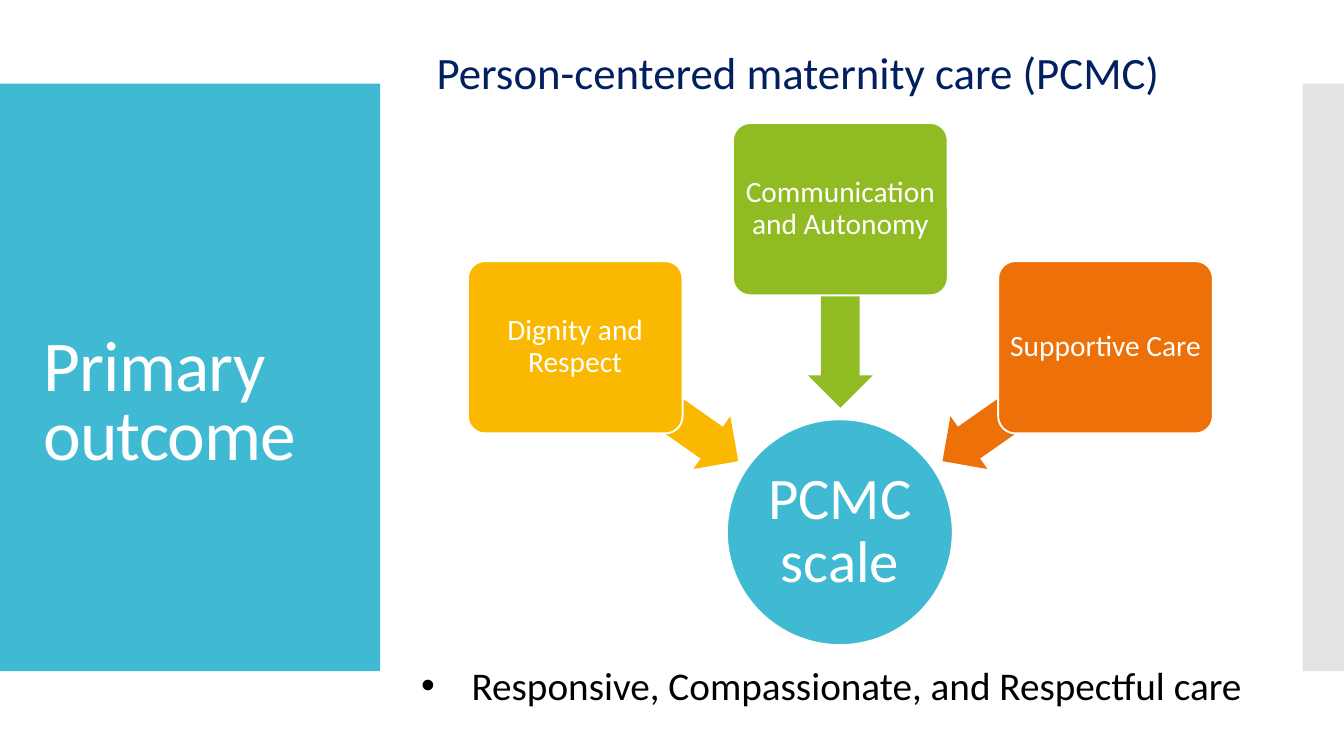
from lxml import etree
from pptx import Presentation
from pptx.dml.color import RGBColor
from pptx.enum import shapes, text
from pptx.oxml import ns
from pptx.util import Inches, Pt

WHITE, TEAL = "FFFFFF", "40BAD2"
CENTER_X = 8.33
DOMAINS = [
    ("Dignity and Respect", "FAB900", -1, 215),
    ("Communication and Autonomy", "90BB23", 0, 270),
    ("Supportive Care", "EE7008", 1, 325),
]


def rgb(value):
    """Turn a hex string into a colour."""
    return RGBColor.from_string(value)


def place(item, left, top, width, height):
    """Move and size an element, given in inches."""
    item.left, item.top = Inches(left), Inches(top)
    item.width, item.height = Inches(width), Inches(height)


def add_block(slide, kind, box, fill, outlined=False):
    """Add a flat preset shape, with a white outline on request."""
    block = slide.shapes.add_shape(kind, *map(Inches, box))
    block.shadow.inherit = False
    block.fill.solid()
    block.fill.fore_color.rgb = rgb(fill)
    if outlined:
        block.line.color.rgb = rgb(WHITE)
        block.line.width = Pt(1.35)
    else:
        block.line.fill.background()
    return block


def write(holder, wording, size, color, anchor, align=text.PP_ALIGN.LEFT,
          spacing=0.9, before=0, bullet=None, indent=0, inset=None):
    """Fill a holder with one formatted paragraph."""
    frame = holder.text_frame
    frame.word_wrap = True
    frame.auto_size = text.MSO_AUTO_SIZE.NONE
    frame.vertical_anchor = anchor
    if inset is not None:
        frame.margin_left = frame.margin_right = Inches(inset)
        frame.margin_top = frame.margin_bottom = Inches(inset)
    frame.text = wording
    paragraph = frame.paragraphs[0]
    properties = paragraph._p.get_or_add_pPr()
    properties.set("marL", str(Inches(indent)))
    properties.set("indent", str(-Inches(indent)))
    if bullet:
        etree.SubElement(properties, ns.qn("a:buFont"), typeface="Arial")
        etree.SubElement(properties, ns.qn("a:buChar"), char=bullet)
    else:
        etree.SubElement(properties, ns.qn("a:buNone"))
    paragraph.alignment = align
    paragraph.line_spacing = spacing
    paragraph.space_before = Pt(before)
    paragraph.font.name = "Calibri"
    paragraph.font.size = Pt(size)
    paragraph.font.color.rgb = rgb(color)
    return paragraph


def add_panels(slide):
    """Put the side panels behind the title."""
    title_panel = add_block(slide, shapes.MSO_SHAPE.RECTANGLE, (0, 0.83, 3.77, 5.83), TEAL)
    edge_panel = add_block(slide, shapes.MSO_SHAPE.RECTANGLE, (12.92, 0.83, 0.42, 5.83), "C8C8C8")
    edge_color = edge_panel.element.spPr.find(".//" + ns.qn("a:srgbClr"))
    etree.SubElement(edge_color, ns.qn("a:alpha"), val="50000")
    for panel in (title_panel, edge_panel):
        slide.shapes.title.element.addprevious(panel.element)


def add_headings(slide):
    """Fill the title and the body placeholder."""
    title, subject = slide.shapes.title, slide.placeholders[1]
    place(title, 0.33, 1.08, 3.09, 3.67)
    heading = write(title, "Primary outcome", 51, WHITE, text.MSO_ANCHOR.BOTTOM, spacing=0.8)
    heading.runs[0]._r.get_or_add_rPr().set("spc", "-60")
    place(subject, 4.23, 0.42, 8.52, 0.64)
    write(subject, "Person-centered maternity care (PCMC)", 32, "002060",
          text.MSO_ANCHOR.MIDDLE, before=12)


def add_scale(slide):
    """Draw the circle that the domains lead to."""
    scale = add_block(slide, shapes.MSO_SHAPE.OVAL,
                      (CENTER_X - 1.12, 4.16, 2.24, 2.24), TEAL, True)
    write(scale, "PCMC scale", 42, WHITE, text.MSO_ANCHOR.MIDDLE,
          text.PP_ALIGN.CENTER, inset=0.03)


def add_domain(slide, wording, color, side, angle):
    """Draw one domain box and its arrow towards the scale."""
    arrow_top, box_top = (3.69, 2.59) if side else (2.74, 1.22)
    arrow = add_block(slide, shapes.MSO_SHAPE.LEFT_ARROW,
                      (CENTER_X + 1.82 * side - 0.98, arrow_top, 1.97, 0.64), color)
    arrow.adjustments[0] = 0.6
    arrow.rotation = angle
    domain = add_block(slide, shapes.MSO_SHAPE.ROUNDED_RECTANGLE,
                       (CENTER_X + 2.63 * side - 1.06, box_top, 2.13, 1.71), color, True)
    domain.adjustments[0] = 0.1
    write(domain, wording, 21, WHITE, text.MSO_ANCHOR.MIDDLE,
          text.PP_ALIGN.CENTER, inset=0.04)


def add_summary(slide):
    """Add the bulleted line below the diagram."""
    summary = slide.shapes.add_textbox(*map(Inches, (4.08, 6.51, 8.67, 0.57)))
    write(summary, "Responsive, Compassionate, and Respectful care", 28, "000000",
          text.MSO_ANCHOR.TOP, spacing=1.0, bullet="•", indent=0.5)


def main():
    """Build and save the slide."""
    deck = Presentation()
    deck.slide_width, deck.slide_height = Inches(13.33), Inches(7.5)
    slide = deck.slides.add_slide(deck.slide_layouts[1])
    add_panels(slide)
    add_headings(slide)
    add_scale(slide)
    for domain in DOMAINS:
        add_domain(slide, *domain)
    add_summary(slide)
    deck.save("out.pptx")


if __name__ == "__main__":
    main()
